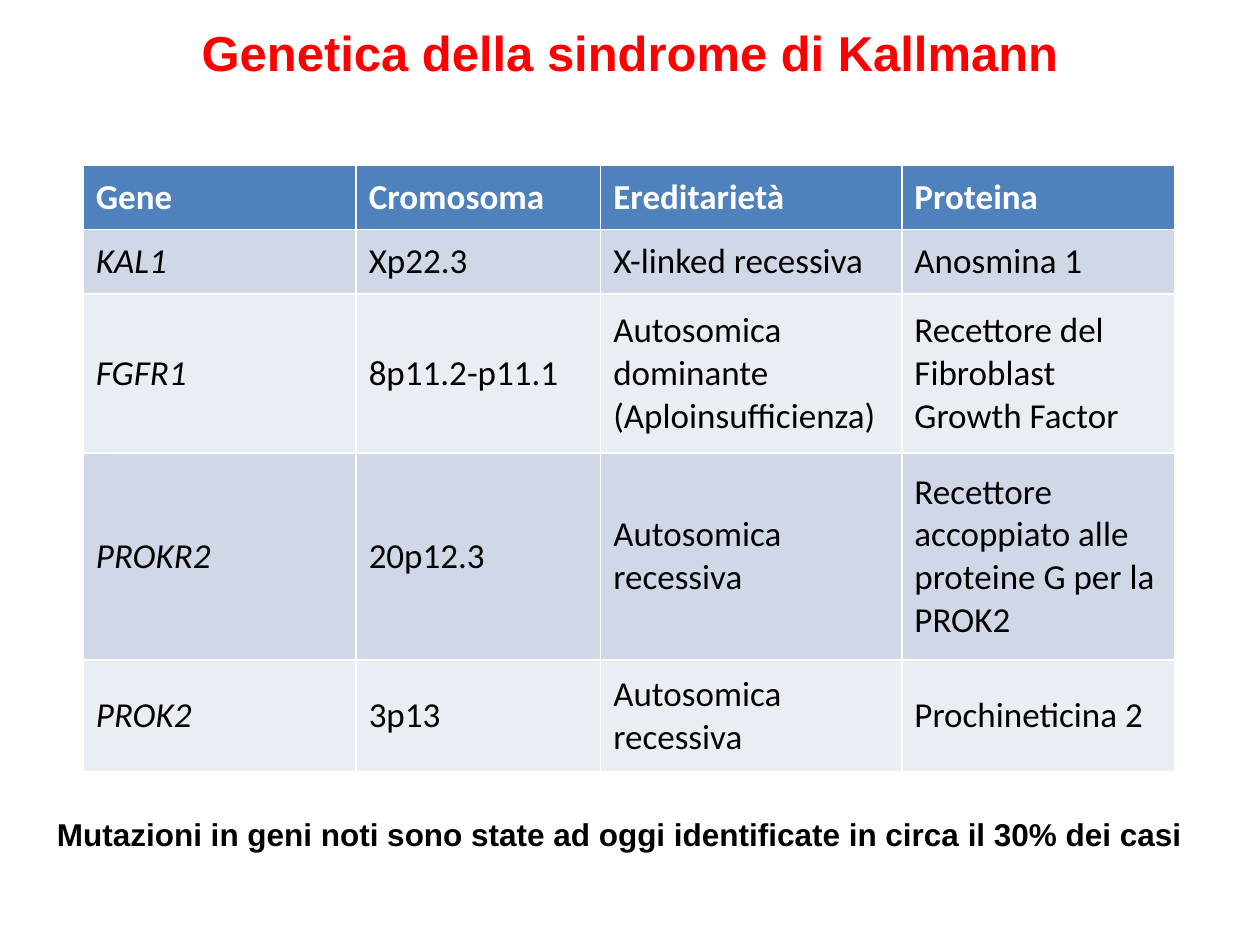
from pptx import Presentation
from pptx import util as u
from pptx.dml.color import RGBColor
from pptx.enum import text

HEADER = ["Gene", "Cromosoma", "Ereditarietà", "Proteina"]
GENES = [
    ["KAL1", "Xp22.3", "X-linked recessiva", "Anosmina 1"],
    ["FGFR1", "8p11.2-p11.1", "Autosomica dominante\n(Aploinsufficienza)",
     "Recettore del Fibroblast Growth Factor"],
    ["PROKR2", "20p12.3", "Autosomica recessiva",
     "Recettore accoppiato alle proteine G per la PROK2"],
    ["PROK2", "3p13", "Autosomica recessiva", "Prochineticina 2"],
]
COLUMN_WIDTHS = [5.5, 4.93, 6.07, 5.5]
ROW_HEIGHTS = [1.3, 1.3, 3.2, 4.17, 2.26]
HEADER_FILL = "4F81BD"
BAND_FILLS = ["D0D8E8", "E9EDF4"]


def color(hex_code):
    return RGBColor.from_string(hex_code)


def write(frame, content, font, size, hex_code, bold=False, italic=False):
    """Set the text of a frame and format all its runs alike."""
    frame.text = content
    for paragraph in frame.paragraphs:
        for run in paragraph.runs:
            run.font.name = font
            run.font.size = u.Pt(size)
            run.font.bold = bold
            run.font.italic = italic
            run.font.color.rgb = color(hex_code)


def add_heading(slide, content, left, top, width, height, size, hex_code, align):
    frame = slide.shapes.add_textbox(
        u.Cm(left), u.Cm(top), u.Cm(width), u.Cm(height)).text_frame
    frame.word_wrap = True
    write(frame, content, "Arial", size, hex_code, bold=True)
    frame.paragraphs[0].alignment = align


def add_gene_table(slide, left, top):
    """Add the table; its default style draws the white cell borders."""
    rows = [HEADER] + GENES
    table = slide.shapes.add_table(
        len(rows), len(HEADER), u.Cm(left), u.Cm(top),
        u.Cm(sum(COLUMN_WIDTHS)), u.Cm(sum(ROW_HEIGHTS))).table
    for column, width in zip(table.columns, COLUMN_WIDTHS):
        column.width = u.Cm(width)
    for r, (values, height) in enumerate(zip(rows, ROW_HEIGHTS)):
        table.rows[r].height = u.Cm(height)
        is_header = r == 0
        fill = HEADER_FILL if is_header else BAND_FILLS[(r - 1) % 2]
        for c, value in enumerate(values):
            cell = table.cell(r, c)
            cell.vertical_anchor = text.MSO_ANCHOR.MIDDLE
            cell.fill.solid()
            cell.fill.fore_color.rgb = color(fill)
            write(cell.text_frame, value, "Calibri", 20,
                  "FFFFFF" if is_header else "000000",
                  bold=is_header, italic=not is_header and c == 0)


def main():
    deck = Presentation()
    deck.slide_width, deck.slide_height = u.Cm(25.4), u.Cm(19.05)
    slide = deck.slides.add_slide(deck.slide_layouts[6])
    add_heading(slide, "Genetica della sindrome di Kallmann",
                1.9, 0.33, 21.6, 2.6, 28, "FF0000", text.PP_ALIGN.CENTER)
    add_gene_table(slide, 1.68, 3.33)
    add_heading(slide, "Mutazioni in geni noti sono state ad oggi identificate "
                "in circa il 30% dei casi",
                0.9, 16.3, 23.5, 1.02, 18, "000000", text.PP_ALIGN.LEFT)
    deck.save("out.pptx")


if __name__ == "__main__":
    main()
